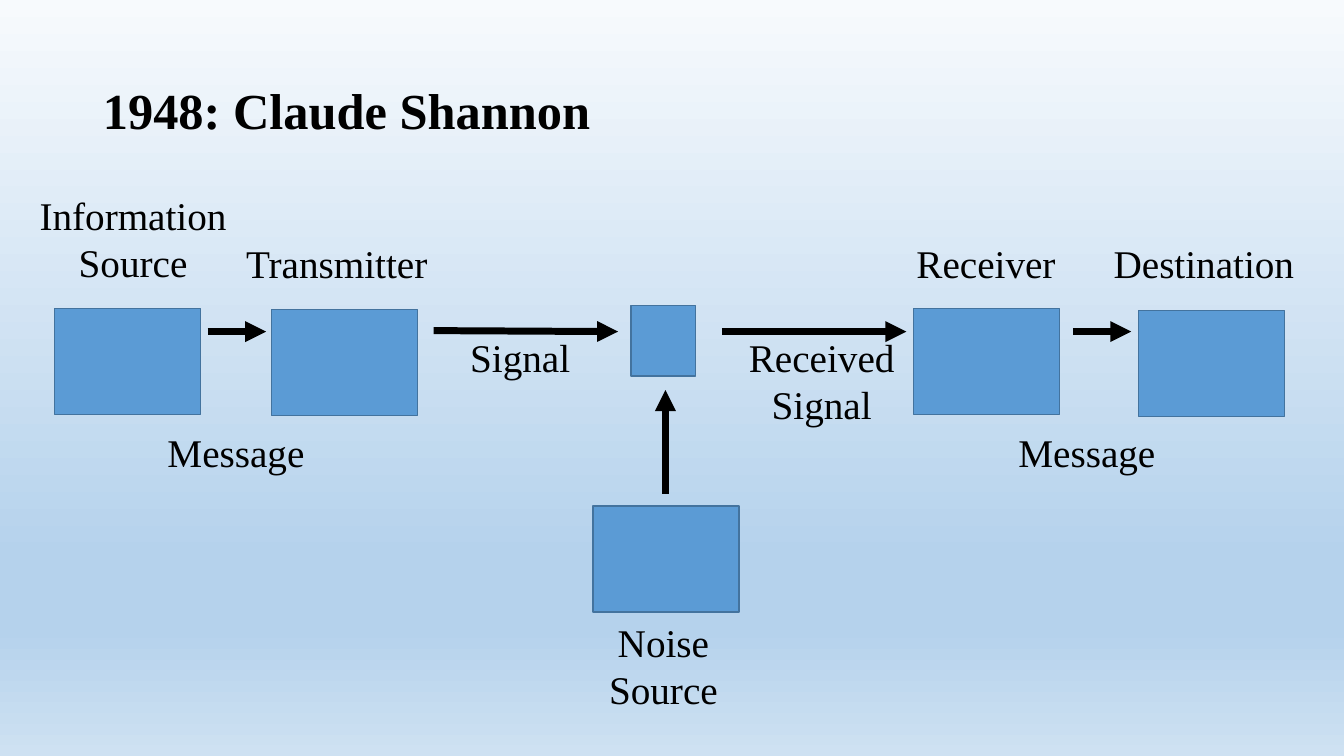
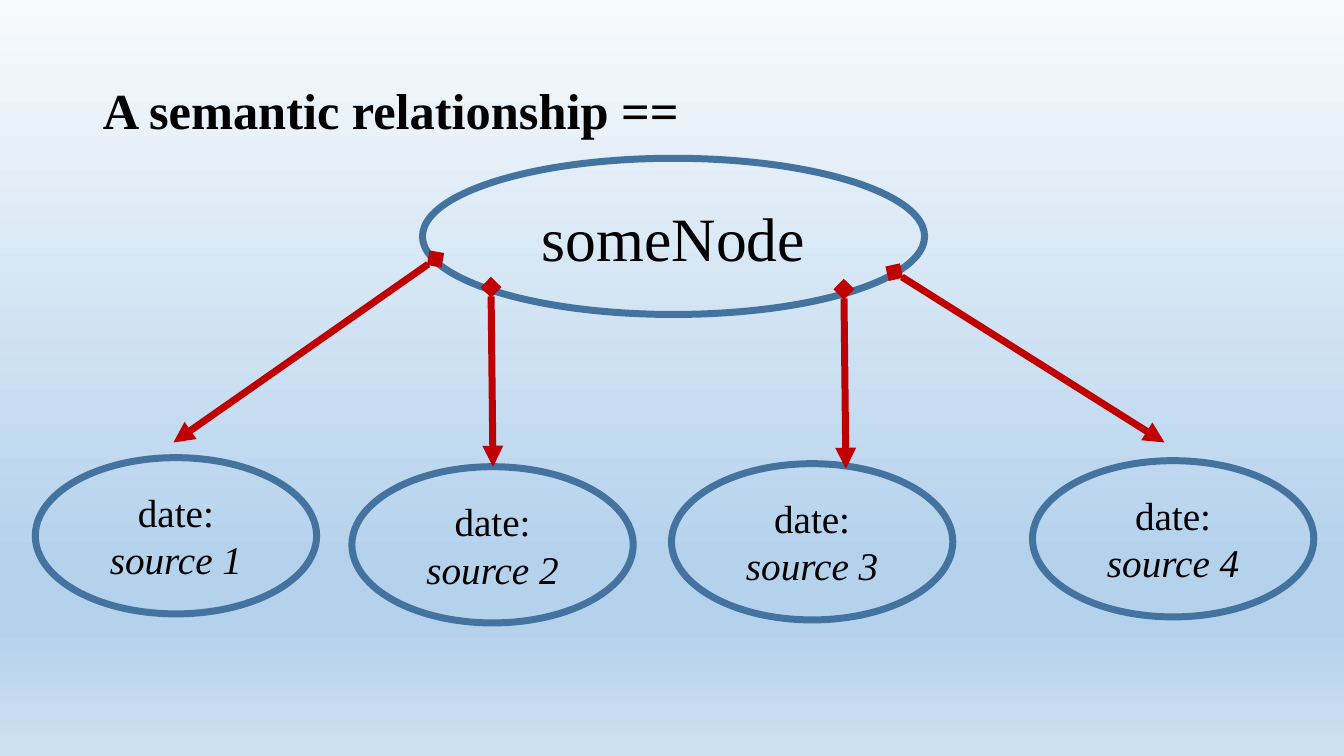
from lxml.etree import SubElement
from pptx import Presentation
from pptx.dml.color import RGBColor
from pptx.enum.shapes import MSO_CONNECTOR, MSO_SHAPE
from pptx.enum.text import MSO_ANCHOR, MSO_AUTO_SIZE, PP_ALIGN
from pptx.oxml.ns import qn
from pptx.util import Emu, Pt

PX = 9144
FONT = "Times New Roman"
BLACK, BLUE, DARK_BLUE, RED = "000000", "5B9BD5", "43739E", "C00000"
BACKDROP = [(0, "F7FAFD"), (74, "B5D2EC"), (83, "B5D2EC"), (100, "CEE1F2")]
TITLE_BOX = (92, 40, 1150, 145)


def px(length):
    """Convert px to EMU."""
    return Emu(length * PX)


def color(hex_code):
    """Turn a hex string into a colour."""
    return RGBColor.from_string(hex_code)


def add_run(paragraph, words, size, bold=False, italic=False):
    """Add one formatted run to a paragraph."""
    run = paragraph.add_run()
    run.text = words
    run.font.name = FONT
    run.font.size = Pt(size)
    run.font.bold = bold
    run.font.italic = italic
    run.font.color.rgb = color(BLACK)


def fill_frame(frame, lines, size, italic_from=None):
    """Write centred lines, in italics from the given index on."""
    frame.word_wrap = True
    for index, words in enumerate(lines):
        paragraph = frame.add_paragraph() if index else frame.paragraphs[0]
        paragraph.alignment = PP_ALIGN.CENTER
        italic = italic_from is not None and index >= italic_from
        add_run(paragraph, words, size, italic=italic)


def add_label(slide, center, top, lines):
    """Place a text box with its lines centred on a given x."""
    width = 220
    label = slide.shapes.add_textbox(
        px(center - width // 2), px(top), px(width), px(47 * len(lines)))
    frame = label.text_frame
    frame.margin_left = frame.margin_right = 0
    frame.margin_top = frame.margin_bottom = 0
    fill_frame(frame, lines, 28)


def add_outline(slide, kind, box, weight, fill=None):
    """Add a dark blue outlined shape, filled if a colour is given."""
    shape = slide.shapes.add_shape(kind, *map(px, box))
    shape.shadow.inherit = False
    shape.line.color.rgb = color(DARK_BLUE)
    shape.line.width = Pt(weight)
    if fill:
        shape.fill.solid()
        shape.fill.fore_color.rgb = color(fill)
    else:
        shape.fill.background()
    return shape


def add_ellipse(slide, box, lines, size):
    """Add an open ellipse holding centred lines."""
    frame = add_outline(slide, MSO_SHAPE.OVAL, box, 5).text_frame
    frame.vertical_anchor = MSO_ANCHOR.MIDDLE
    fill_frame(frame, lines, size, italic_from=1)


def add_arrow(slide, points, hex_code, start=None):
    """Add a thick arrow, with an optional marker at its start."""
    arrow = slide.shapes.add_connector(
        MSO_CONNECTOR.STRAIGHT, *map(px, points))
    arrow.line.color.rgb = color(hex_code)
    arrow.line.width = Pt(5)
    properties = arrow.element.spPr
    line = properties.find(qn("a:ln"))
    if start:
        SubElement(line, qn("a:headEnd"), type=start)
    SubElement(line, qn("a:tailEnd"), type="triangle")
    SubElement(properties, qn("a:effectLst"))


def style_template(deck):
    """Set the shared backdrop and title place, and return the layout."""
    master = deck.slide_master
    master.background.fill.gradient()
    gradient = master.element.find(".//" + qn("a:gradFill"))
    for part in list(gradient):
        gradient.remove(part)
    stops = SubElement(gradient, qn("a:gsLst"))
    for percent, hex_code in BACKDROP:
        stop = SubElement(stops, qn("a:gs"), pos=str(percent * 1000))
        SubElement(stop, qn("a:srgbClr"), val=hex_code)
    SubElement(gradient, qn("a:lin"), ang="5400000", scaled="0")
    layout = deck.slide_layouts.get_by_name("Title Only")
    title = layout.placeholders[0]
    title.left, title.top, title.width, title.height = map(px, TITLE_BOX)
    return layout


def add_titled_slide(deck, layout, heading):
    """Add a slide with its heading."""
    slide = deck.slides.add_slide(layout)
    frame = slide.shapes.title.text_frame
    frame.auto_size = MSO_AUTO_SIZE.NONE
    frame.vertical_anchor = MSO_ANCHOR.MIDDLE
    paragraph = frame.paragraphs[0]
    paragraph.alignment = PP_ALIGN.LEFT
    paragraph.line_spacing = 0.9
    add_run(paragraph, heading, 36, bold=True)
    return slide


def draw_channel(slide, left, top):
    """Draw the communication channel from source to destination."""
    labels = [
        (102, 0, ["Information", "Source"]),
        (304, 1, ["Transmitter"]),
        (948, 1, ["Receiver"]),
        (1164, 1, ["Destination"]),
        (486, 3, ["Signal"]),
        (785, 3, ["Received", "Signal"]),
        (204, 5, ["Message"]),
        (1048, 5, ["Message"]),
        (628, 9, ["Noise", "Source"]),
    ]
    for center, row, lines in labels:
        add_label(slide, left + center, top + 5 + 47 * row, lines)
    stations = [(24, 121), (558, 317), (239, 122), (876, 121), (1099, 123)]
    blocks = [(x, y, 145, 105) for x, y in stations] + [(596, 118, 64, 70)]
    for x, y, width, height in blocks:
        add_outline(slide, MSO_SHAPE.RECTANGLE,
                    (left + x, top + y, width, height), 1, BLUE)
    links = [(176, 144, 234, 144), (1034, 144, 1092, 144),
             (400, 143, 583, 144), (686, 144, 869, 144),
             (630, 305, 630, 202)]
    for x1, y1, x2, y2 in links:
        add_arrow(slide, (left + x1, top + y1, left + x2, top + y2), BLACK)


def draw_node_tree(slide, left, top):
    """Draw the node with arrows to its dated sources."""
    add_ellipse(slide, (left + 384, top, 498, 155), ["someNode"], 44)
    sources = [(0, 297), (314, 306), (631, 303), (989, 300)]
    for number, (x, y) in enumerate(sources, 1):
        add_ellipse(slide, (left + x, top + y, 279, 155),
                    ["date:", f"source {number}"], 28)
    branches = [(397, 100, 137, 282), (852, 113, 1120, 282),
                (452, 128, 454, 306), (802, 130, 804, 308)]
    for x1, y1, x2, y2 in branches:
        add_arrow(slide, (left + x1, top + y1, left + x2, top + y2),
                  RED, "diamond")


def main():
    """Build and save the presentation."""
    deck = Presentation()
    deck.slide_width, deck.slide_height = px(1333), px(750)
    layout = style_template(deck)
    draw_channel(add_titled_slide(deck, layout, "1948: Claude Shannon"),
                 30, 185)
    draw_node_tree(add_titled_slide(deck, layout, "A semantic relationship =="),
                   35, 157)
    deck.save("out.pptx")


if __name__ == "__main__":
    main()
